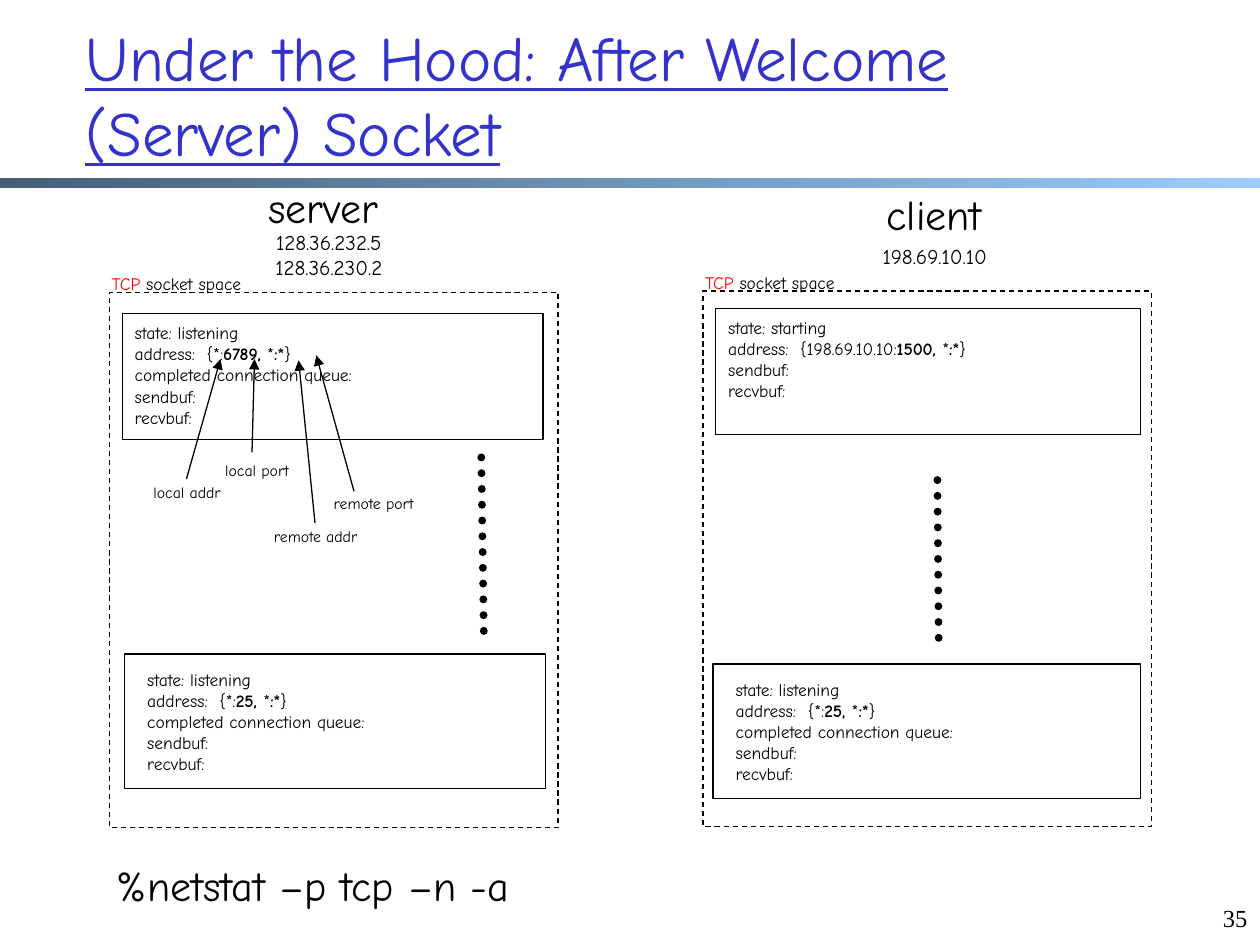
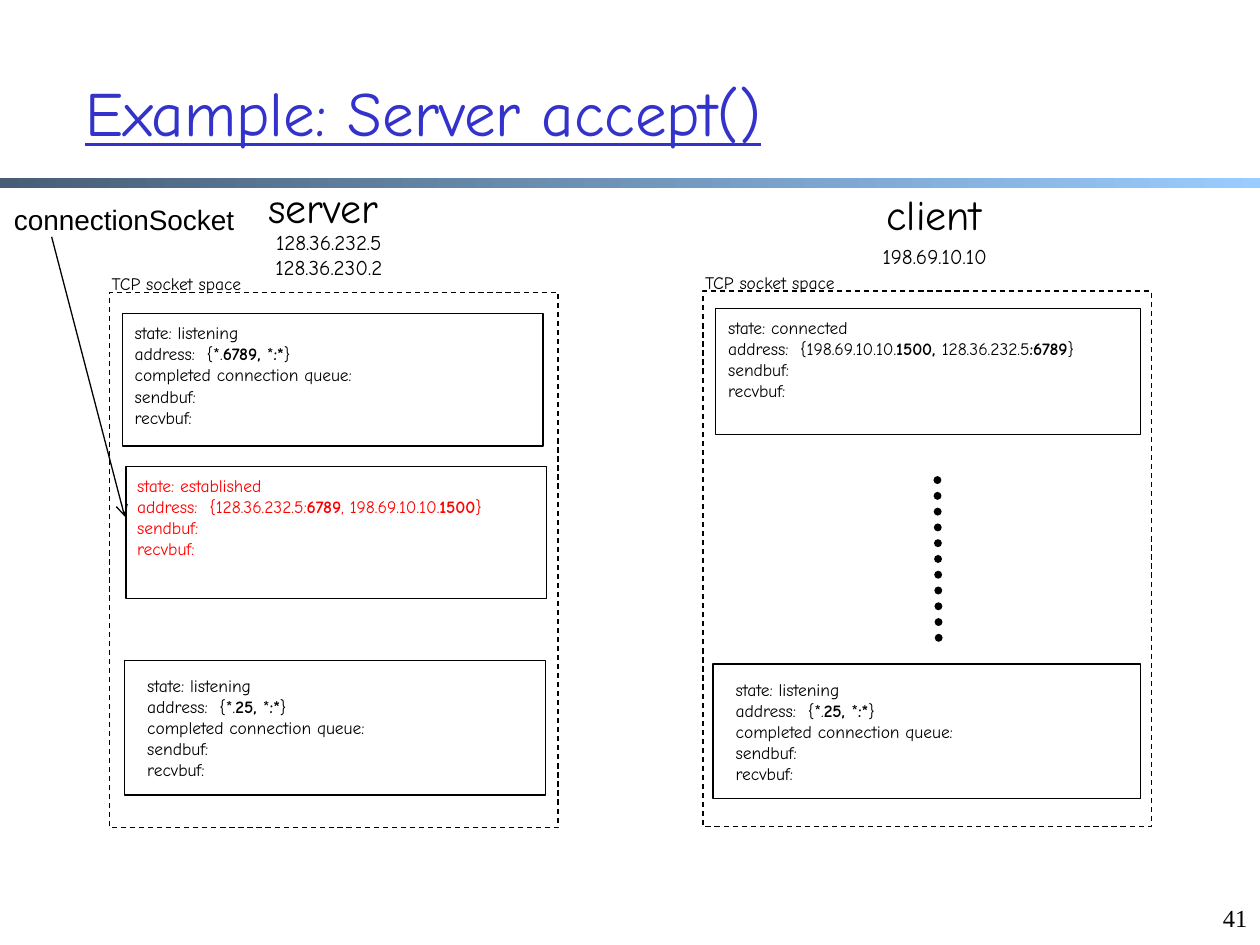
from dataclasses import dataclass

from lxml import etree
from pptx import Presentation
from pptx.dml.color import RGBColor
from pptx.enum.dml import MSO_LINE
from pptx.enum.shapes import MSO_CONNECTOR, MSO_SHAPE
from pptx.enum.text import MSO_ANCHOR, MSO_AUTO_SIZE, PP_ALIGN
from pptx.oxml.ns import qn
from pptx.util import Inches, Pt

RECTANGLE = MSO_SHAPE.RECTANGLE
STRAIGHT = MSO_CONNECTOR.STRAIGHT
DASH, DOT = MSO_LINE.DASH, MSO_LINE.ROUND_DOT
TOP, MIDDLE = MSO_ANCHOR.TOP, MSO_ANCHOR.MIDDLE
LEFT, CENTER, RIGHT = PP_ALIGN.LEFT, PP_ALIGN.CENTER, PP_ALIGN.RIGHT
GROW, FIXED = MSO_AUTO_SIZE.SHAPE_TO_FIT_TEXT, MSO_AUTO_SIZE.NONE

BLACK, RED, TITLE_BLUE = "000000", "FF0000", "3333CC"
BAND_START, BAND_END = "475E76", "99CCFF"
BODY_FONT = "Comic Neue"
BOLD = {"bold": True}

UPPER_INSET = (0, 0.02)
LOWER_INSET = (0.08, 0.07)
BUFFERS = ["sendbuf:", "recvbuf:"]


@dataclass
class Box:
    left: float
    top: float
    width: float
    height: float

    def inside(self, left, top, width, height):
        return Box(self.left + left, self.top + top, width, height)

    def point(self, across, down):
        return self.left + across, self.top + down

    def lengths(self):
        return [Inches(n) for n in (self.left, self.top, self.width, self.height)]


SERVER = Box(0.87, 2.32, 3.56, 4.25)
CLIENT = Box(5.58, 2.31, 3.56, 4.25)


def color(value):
    return RGBColor.from_string(value)


def apply(target, values):
    for name, value in values.items():
        setattr(target, name, value)


def add_text(shapes, box, lines, size, fill=BLACK, font=BODY_FONT, align=LEFT,
             anchor=TOP, wrap=False, accent=BOLD, accent_fill=None, underline=None):
    frame = shapes.add_textbox(*box.lengths()).text_frame
    apply(frame, {"word_wrap": wrap, "auto_size": FIXED if wrap else GROW,
                  "vertical_anchor": anchor})
    for number, line in enumerate(lines):
        para = frame.paragraphs[0] if number == 0 else frame.add_paragraph()
        para.alignment = align
        for index, words in enumerate(line.split("|")):
            if not words:
                continue
            span = para.add_run()
            span.text = words
            special = index % 2 == 1
            apply(span.font, {"name": font, "size": Pt(size), "underline": underline})
            apply(span.font, accent if special else {})
            span.font.color.rgb = color(accent_fill if special and accent_fill else fill)


def add_frame(shapes, box, dash=None):
    shape = shapes.add_shape(RECTANGLE, *box.lengths())
    shape.shadow.inherit = False
    shape.fill.background()
    shape.line.color.rgb = color(BLACK)
    apply(shape.line, {"width": Pt(0.75), "dash_style": dash})


def add_line(page, start, end, width=0.75, dash=None, head=None):
    ends = [Inches(n) for n in (*start, *end)]
    connector = page.shapes.add_connector(STRAIGHT, *ends)
    connector.line.color.rgb = color(BLACK)
    apply(connector.line, {"width": Pt(width), "dash_style": dash})
    properties = connector._element.spPr
    outline = properties.find(qn("a:ln"))
    if dash:
        outline.set("cap", "rnd")
    if head:
        etree.SubElement(outline, qn("a:tailEnd"), type=head)
    etree.SubElement(properties, qn("a:effectLst"))


def add_base(deck, title, title_top, number):
    page = deck.slides.add_slide(deck.slide_layouts[6])
    band = page.shapes.add_shape(RECTANGLE, *Box(0, 1.41, 10, 0.08).lengths())
    band.shadow.inherit = False
    band.line.fill.background()
    band.fill.gradient()
    band.fill.gradient_angle = 0
    for stop, position, shade in zip(band.fill.gradient_stops, (0, 1),
                                     (BAND_START, BAND_END)):
        stop.position = position
        stop.color.rgb = color(shade)
    add_text(page.shapes, Box(0.58, title_top, 8.81, 1.25), [title], 36, TITLE_BLUE,
             anchor=MIDDLE, wrap=True, underline=True)
    add_text(page.shapes, Box(9.5, 7.12, 0.5, 0.5), [str(number)], 14,
             font="Times New Roman", align=RIGHT, wrap=True)
    return page


def add_socket(page, box, lines, text_width, inset=UPPER_INSET, fill=BLACK):
    group = page.shapes.add_group_shape()
    add_frame(group.shapes, box)
    text_box = box.inside(*inset, text_width, 0.16 * len(lines) + 0.13)
    add_text(group.shapes, text_box, lines, 10, fill)


def add_host(page, space, name, name_box, addresses, address_box, protocol_fill):
    add_text(page.shapes, space.inside(*name_box), [name], 24, align=CENTER, anchor=MIDDLE)
    add_text(page.shapes, space.inside(*address_box), addresses, 12, align=CENTER)
    add_frame(page.shapes, space, DASH)
    add_text(page.shapes, space.inside(-0.13, -0.2, 1.32, 0.27), ["|TCP| socket space"],
             10, align=CENTER, accent={}, accent_fill=protocol_fill)


def listening(address):
    return ["state: listening", f"address:  {address}",
            "completed connection queue:", *BUFFERS]


def add_server(page, protocol_fill, mark, upper_height, lower_top):
    add_host(page, SERVER, "server", (1.09, -0.93, 1.21, 0.5),
             ["128.36.232.5", "128.36.230.2"], (1.13, -0.55, 1.22, 0.5), protocol_fill)
    add_socket(page, SERVER.inside(0.1, 0.17, 3.34, upper_height),
               listening(f"{{*{mark}|6789, |*|:*|}}"), 2.05)
    add_socket(page, SERVER.inside(0.12, lower_top, 3.34, 1.07),
               listening(f"{{*{mark}|25, |*|:*|}}"), 2.09, LOWER_INSET)


def add_client(page, protocol_fill, mark, state, remote, text_width):
    add_host(page, CLIENT, "client", (1.3, -0.86, 1.07, 0.5),
             ["198.69.10.10"], (1.26, -0.43, 1.16, 0.3), protocol_fill)
    address = f"address:  {{198.69.10.10{mark}|1500, |{remote}}}"
    add_socket(page, CLIENT.inside(0.1, 0.14, 3.37, 1),
               [f"state: {state}", address, *BUFFERS], text_width)
    add_socket(page, CLIENT.inside(0.08, 2.96, 3.39, 1.07),
               listening(f"{{*{mark}|25, |*|:*|}}"), 2.09, LOWER_INSET)
    add_line(page, CLIENT.point(1.86, 1.5), CLIENT.point(1.87, 2.77), 4.5, DOT)


def add_address_callouts(page, space):
    callouts = [
        ("local addr", (0.23, 1.46, 0.77), (0.61, 1.48), (0.88, 0.53)),
        ("local port", (0.79, 1.29, 0.76), (1.13, 1.27), (1.15, 0.53)),
        ("remote addr", (1.17, 1.81, 0.93), (1.63, 1.83), (1.5, 0.54)),
        ("remote port", (1.64, 1.55, 0.91), (1.94, 1.58), (1.64, 0.5)),
    ]
    for label, place, start, end in callouts:
        add_line(page, space.point(*start), space.point(*end), head="triangle")
        add_text(page.shapes, space.inside(*place, 0.25), [label], 9, align=CENTER)


def add_connection(page, space):
    lines = ["state: established",
             "address:  {128.36.232.5:|6789|, 198.69.10.10.|1500|}", *BUFFERS]
    add_socket(page, space.inside(0.13, 1.38, 3.34, 1.05), lines, 3.42,
               inset=(-0.01, 0.02), fill=RED)
    add_text(page.shapes, space.inside(-0.87, -0.76, 1.97, 0.37), ["connectionSocket "],
             16, font="Arial", align=CENTER)
    add_line(page, space.point(-0.46, -0.44), space.point(0.12, 1.78), head="arrow")


def build_welcome_page(deck):
    page = add_base(deck, "Under the Hood: After Welcome (Server) Socket", 0.12, 35)
    add_server(page, RED, ":", 1, 2.87)
    add_line(page, SERVER.point(2.95, 1.31), SERVER.point(2.97, 2.7), 4.5, DOT)
    add_client(page, RED, ":", "starting", "*|:*|", 2.45)
    add_address_callouts(page, SERVER)
    add_text(page.shapes, Box(0.83, 6.77, 3.53, 0.51), ["%netstat –p tcp –n -a"], 24)


def build_accept_page(deck):
    page = add_base(deck, "Example: Server accept()", 0.26, 41)
    add_server(page, BLACK, ".", 1.05, 2.92)
    add_client(page, BLACK, ".", "connected", "128.36.232.5|:6789|", 3.49)
    add_connection(page, SERVER)


def main():
    deck = Presentation()
    apply(deck, {"slide_width": Inches(10), "slide_height": Inches(7.5)})
    build_welcome_page(deck)
    build_accept_page(deck)
    deck.save("out.pptx")


if __name__ == "__main__":
    main()
